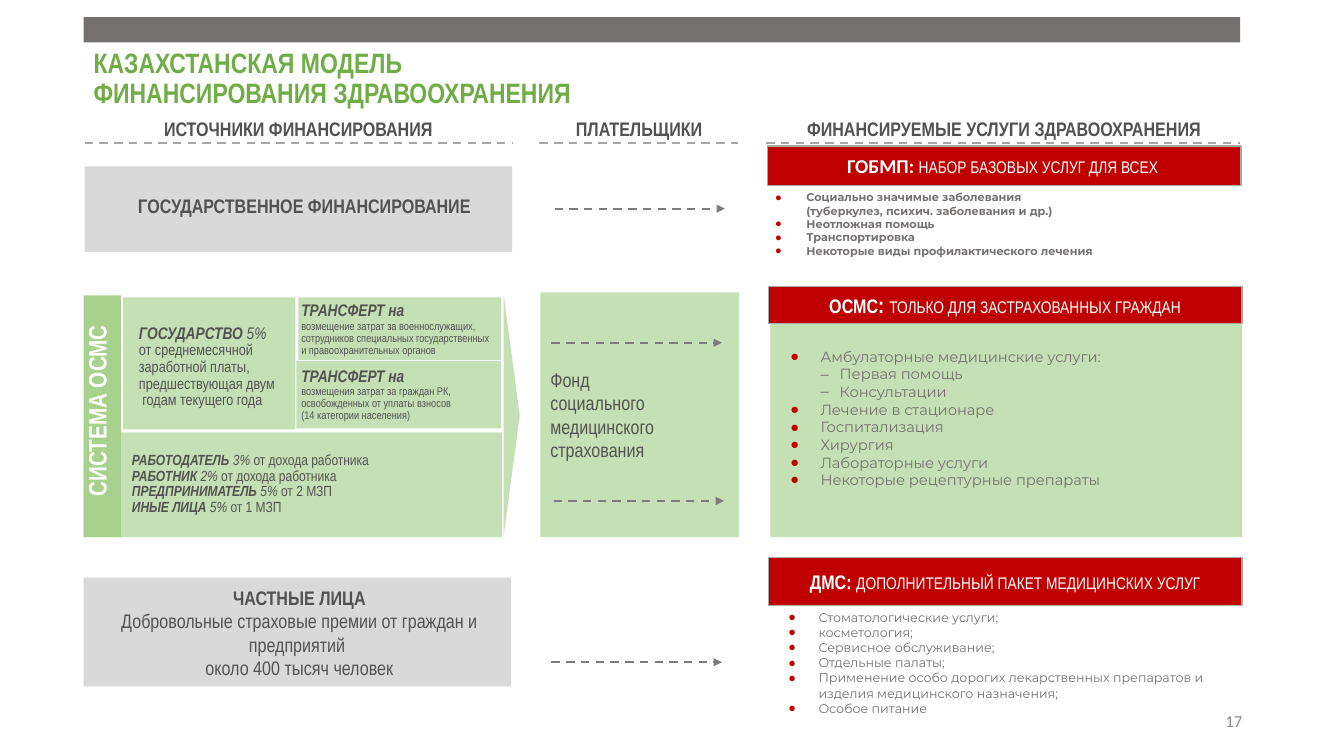
from lxml.etree import SubElement
from pptx import Presentation
from pptx.dml.color import RGBColor
from pptx.enum.dml import MSO_LINE
from pptx.enum.shapes import MSO_CONNECTOR, MSO_SHAPE
from pptx.enum.text import MSO_ANCHOR, PP_ALIGN
from pptx.oxml.ns import qn
from pptx.util import Inches, Pt

WHITE = RGBColor(0xFF, 0xFF, 0xFF)
RED = RGBColor(0xC0, 0x00, 0x00)
GREEN = RGBColor(0x70, 0xAD, 0x47)
MID_GREEN = RGBColor(0xA9, 0xD1, 0x8E)
PALE_GREEN = RGBColor(0xC5, 0xE0, 0xB4)
PALE_GRAY = RGBColor(0xD9, 0xD9, 0xD9)
LINE_GRAY = RGBColor(0xA6, 0xA6, 0xA6)
ARROW_GRAY = RGBColor(0x7C, 0x7C, 0x7C)
LIST_GRAY = RGBColor(0x76, 0x71, 0x71)
PAGE_GRAY = RGBColor(0x8C, 0x8C, 0x8C)
DARK = RGBColor(0x52, 0x52, 0x52)
CENTER = PP_ALIGN.CENTER

deck = Presentation()
deck.slide_width, deck.slide_height = Inches(13.33), Inches(7.5)
page = deck.slides.add_slide(deck.slide_layouts[6])


def add_box(left, top, width, height, fill=None, line=None, kind=MSO_SHAPE.RECTANGLE):
    """Add a filled shape, or a text box when there is no fill."""
    place = [Inches(n) for n in (left, top, width, height)]
    if fill is None:
        box = page.shapes.add_textbox(*place)
    else:
        box = page.shapes.add_shape(kind, *place)
        box.shadow.inherit = False
        box.fill.solid()
        box.fill.fore_color.rgb = fill
        if line is None:
            box.line.fill.background()
        else:
            box.line.color.rgb = line
            box.line.width = Pt(1)
        box.text_frame.vertical_anchor = MSO_ANCHOR.MIDDLE
    box.text_frame.word_wrap = True
    return box


def write(box, text, size=14, color=DARK, font="Arial Narrow", bold=False, italic=False,
          align=PP_ALIGN.LEFT, spacing=1.0, bullet=None, bullet_color=None,
          indent=(0, 0), join=False):
    """Add a paragraph, or with join extend the last one."""
    frame = box.text_frame
    para = frame.paragraphs[-1]
    if not join:
        if para.runs:
            para = frame.add_paragraph()
        para.alignment = align
        para.line_spacing = spacing
        if bullet:
            props = para._p.get_or_add_pPr()
            props.set("marL", str(Inches(indent[0])))
            props.set("indent", str(Inches(indent[1])))
            if bullet_color:
                holder = SubElement(props, qn("a:buClr"))
                SubElement(holder, qn("a:srgbClr"), val=str(bullet_color))
            SubElement(props, qn("a:buFont"), typeface="Arial")
            SubElement(props, qn("a:buChar"), char=bullet)
    for number, part in enumerate(text.split("\n")):
        if number:
            para.add_line_break()
        span = para.add_run()
        span.text = part
        span.font.size = Pt(size)
        span.font.name = font
        span.font.bold = bold
        span.font.italic = italic
        span.font.color.rgb = color


# Header
add_box(0.83, 0.17, 11.47, 0.25, LIST_GRAY)
title = add_box(0.83, 0.41, 11.5, 0.76)
title.text_frame.vertical_anchor = MSO_ANCHOR.MIDDLE
write(title, "КАЗАХСТАНСКАЯ МОДЕЛЬ \nФИНАНСИРОВАНИЯ ЗДРАВООХРАНЕНИЯ",
      size=20, color=GREEN, bold=True, spacing=0.9)
for left, width, heading in [(0.84, 4.24, "ИСТОЧНИКИ ФИНАНСИРОВАНИЯ"),
                             (5.36, 1.96, "ПЛАТЕЛЬЩИКИ"),
                             (7.61, 4.7, "ФИНАНСИРУЕМЫЕ УСЛУГИ ЗДРАВООХРАНЕНИЯ")]:
    write(add_box(left, 1.11, width, 0.34), heading, bold=True, align=CENTER)

# State and private sources
add_box(0.84, 1.65, 4.24, 0.85, PALE_GRAY)
state_label = add_box(1.04, 1.87, 3.96, 0.34)
write(state_label, "ГОСУДАРСТВЕННОЕ ФИНАНСИРОВАНИЕ", bold=True, align=CENTER)
add_box(0.83, 5.73, 4.24, 1.08, PALE_GRAY)
private_label = add_box(0.99, 5.76, 3.96, 1.04)
write(private_label, "ЧАСТНЫЕ ЛИЦА", bold=True, align=CENTER)
for text in ["Добровольные страховые премии от граждан и предприятий ",
             "около 400 тысяч человек"]:
    write(private_label, text, align=CENTER)

# Insurance system block
add_box(0.83, 4.29, 4.15, 1.04, PALE_GREEN)
add_box(0.83, 2.93, 0.37, 2.4, MID_GREEN)
system_label = add_box(0.76, 2.87, 0.5, 2.41)
system_label.text_frame._txBody.bodyPr.set("vert", "vert270")
write(system_label, "СИСТЕМА ОСМС", size=18, color=WHITE, bold=True, align=CENTER)
pointer = add_box(3.88, 4.04, 2.39, 0.16, PALE_GREEN, kind=MSO_SHAPE.ISOSCELES_TRIANGLE)
pointer.rotation = 90

add_box(1.22, 2.95, 1.71, 1.31, PALE_GREEN)
state_share = add_box(1.28, 3.17, 1.7, 0.95)
write(state_share, "ГОСУДАРСТВО", size=12, bold=True, italic=True, spacing=0.9)
write(state_share, " 5%", size=12, italic=True, join=True)
for text in ["от среднемесячной", "заработной платы,", "предшествующая двум",
             " годам текущего года"]:
    write(state_share, text, size=11, spacing=0.9)

transfers = [
    ((2.96, 2.95, 2.01, 0.62), (2.89, 2.95, 2.1, 0.65),
     ["возмещение затрат за военнослужащих, сотрудников специальных государственных "
      "и правоохранительных органов"]),
    ((2.94, 3.58, 2.03, 0.67), (2.89, 3.6, 2.06, 0.65),
     ["возмещения затрат за граждан РК, освобожденных от уплаты взносов",
      "(14 категории населения)"]),
]
for panel, label, details in transfers:
    add_box(*panel, PALE_GREEN)
    box = add_box(*label)
    write(box, "ТРАНСФЕРТ на", size=12, bold=True, italic=True, spacing=0.9)
    for text in details:
        write(box, text, size=8, spacing=0.9)

payers = add_box(1.21, 4.44, 2.62, 0.74)
for payer, rate, base in [("РАБОТОДАТЕЛЬ", " 3% ", "от дохода работника"),
                          ("РАБОТНИК", " 2% ", "от дохода работника"),
                          ("ПРЕДПРИНИМАТЕЛЬ", " 5% ", "от 2 МЗП"),
                          ("ИНЫЕ ЛИЦА", " 5% ", "от 1 МЗП")]:
    write(payers, payer, size=10.5, bold=True, italic=True, spacing=0.9)
    write(payers, rate, size=10.5, italic=True, join=True)
    write(payers, base, size=10.5, join=True)

# Payer fund
fund = add_box(5.36, 2.9, 1.97, 2.43, PALE_GREEN)
write(fund, "Фонд \nсоциального медицинского страхования")

# Service packages
add_box(7.64, 3.21, 4.68, 2.12, PALE_GREEN)
add_box(7.61, 1.45, 4.7, 0.39, RED, LINE_GRAY)
banners = [
    (add_box(7.6, 1.48, 4.69, 0.34), "ГОБМП", ": ", 14, "Calibri",
     "НАБОР БАЗОВЫХ УСЛУГ ДЛЯ ВСЕХ"),
    (add_box(7.62, 2.84, 4.7, 0.37, RED, LINE_GRAY), "ОСМС", ": ", 16, "Arial Narrow",
     "ТОЛЬКО ДЛЯ ЗАСТРАХОВАННЫХ ГРАЖДАН"),
    (add_box(7.62, 5.53, 4.7, 0.48, RED, LINE_GRAY), "ДМС", ": ", 14, "Arial Narrow",
     "ДОПОЛНИТЕЛЬНЫЙ ПАКЕТ МЕДИЦИНСКИХ УСЛУГ"),
]
for box, package, colon, colon_size, font, text in banners:
    write(box, package, color=WHITE, font=font, bold=True, align=CENTER)
    write(box, colon, size=colon_size, color=WHITE, font=font, bold=True, join=True)
    write(box, text, size=12, color=WHITE, join=True)

service_lists = [
    ((7.59, 1.84, 4.73, 0.77), 8, True, (0.31, -0.31),
     ["Социально значимые заболевания \n(туберкулез, психич. заболевания и др.)",
      "Неотложная помощь", "Транспортировка",
      "Некоторые виды профилактического лечения"]),
    ((7.64, 3.4, 4.7, 1.51), 10.5, False, (0.4, -0.3),
     ["Амбулаторные медицинские услуги:", "– Первая помощь", "– Консультации",
      "Лечение в стационаре", "Госпитализация", "Хирургия", "Лабораторные услуги",
      "Некоторые рецептурные препараты"]),
    ((7.62, 6, 4.7, 1.16), 9, False, (0.4, -0.3),
     ["Стоматологические услуги;", "косметология;", "Сервисное обслуживание;",
      "Отдельные палаты;",
      "Применение особо дорогих лекарственных препаратов и изделия медицинского назначения;",
      "Особое питание"]),
]
for place, size, bold, indent, services in service_lists:
    box = add_box(*place)
    for service in services:
        nested = service.startswith("– ")
        write(box, service.removeprefix("– "), size=size, color=LIST_GRAY,
              font="Montserrat", bold=bold, bullet="–" if nested else "●",
              bullet_color=None if nested else RED,
              indent=(0.59, -0.19) if nested else indent)

# Dashed rules and arrows
rules = [(left, right, 1.42, LINE_GRAY, False)
         for left, right in [(0.84, 5.08), (5.35, 7.32), (7.6, 12.3)]]
arrows = [(left, left + 1.69, y, ARROW_GRAY, True)
          for left, y in [(5.5, 2.07), (5.47, 3.4), (5.49, 4.97), (5.47, 6.57)]]
for left, right, y, color, has_head in rules + arrows:
    link = page.shapes.add_connector(MSO_CONNECTOR.STRAIGHT, Inches(left), Inches(y),
                                     Inches(right), Inches(y))
    link.line.color.rgb = color
    link.line.width = Pt(1.5)
    link.line.dash_style = MSO_LINE.DASH
    if has_head:
        SubElement(link.line._get_or_add_ln(), qn("a:tailEnd"), type="triangle")
    SubElement(link._element.spPr, qn("a:effectLst"))

page_number = add_box(9.42, 6.95, 3, 0.4)
page_number.text_frame.vertical_anchor = MSO_ANCHOR.MIDDLE
write(page_number, "17", size=12, color=PAGE_GRAY, font="Calibri", align=PP_ALIGN.RIGHT)

deck.save("out.pptx")
